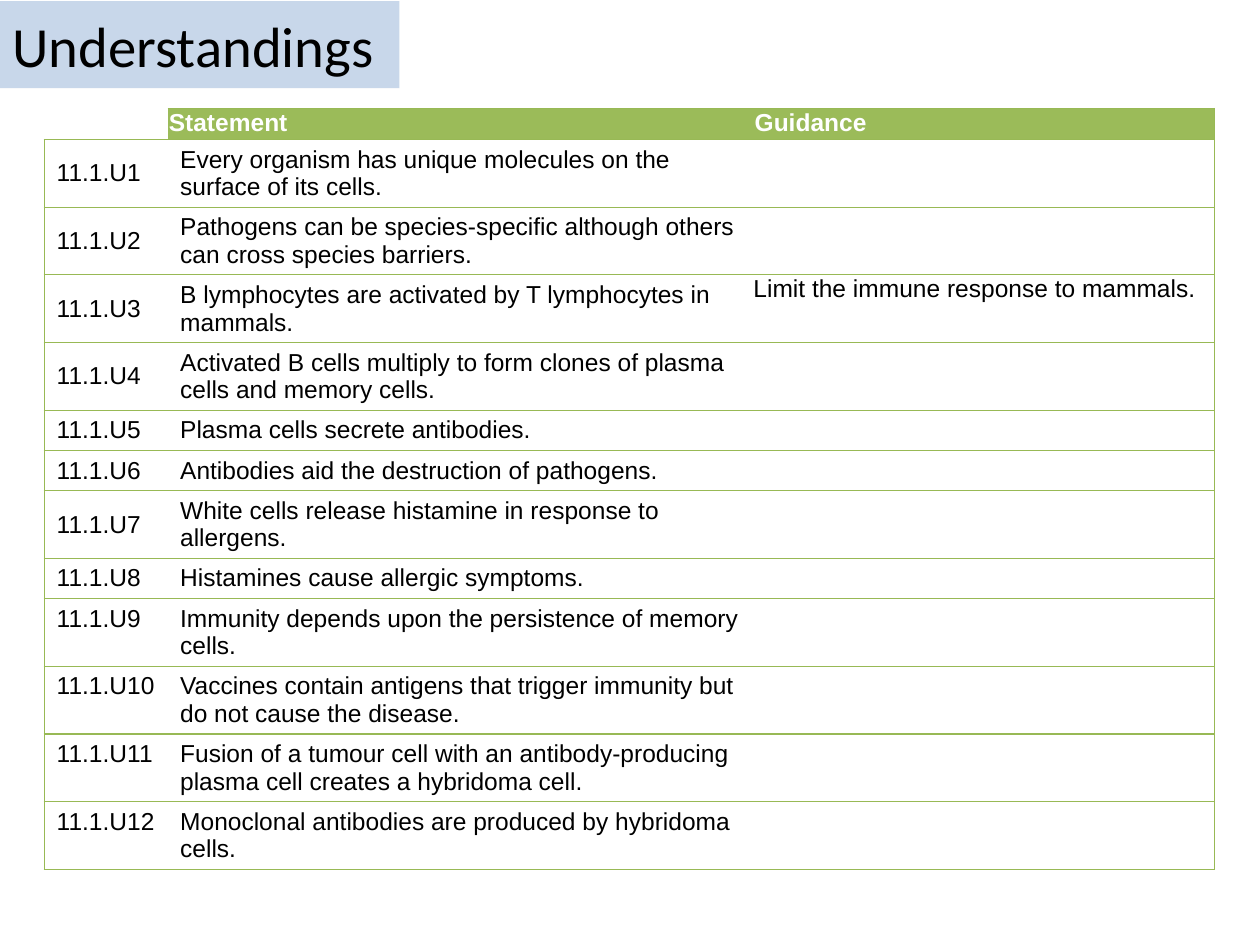
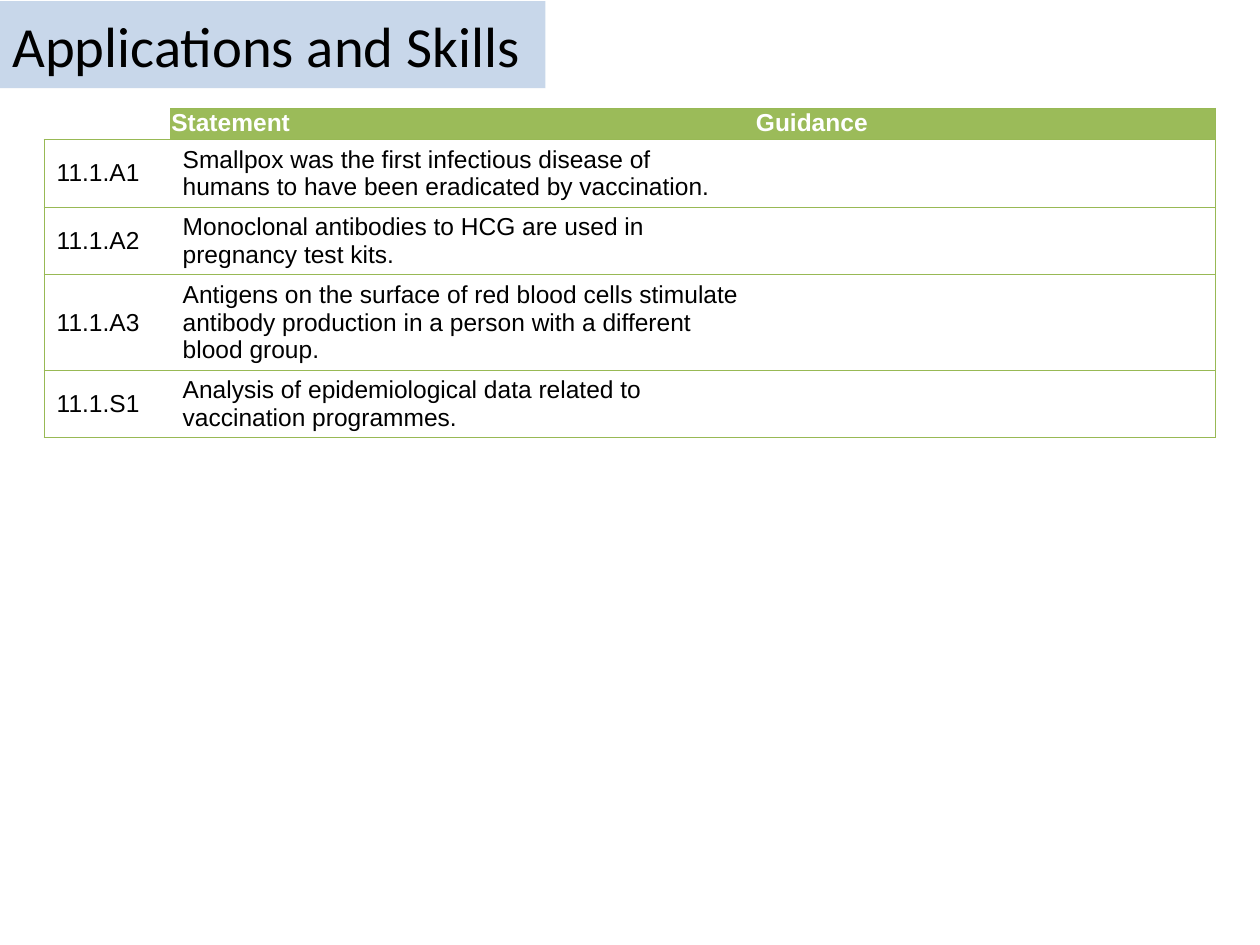
"""Build the immunology syllabus slides: understandings, applications and skills."""
from dataclasses import dataclass

from lxml import etree
from pptx import Presentation
from pptx import util as u
from pptx.dml.color import RGBColor
from pptx.enum import shapes, text
from pptx.oxml import ns


@dataclass(frozen=True)
class Theme:
    title_band: str = "B9CDE5"
    title_opacity: int = 78000
    header: str = "9BBB59"
    border: str = "98B955"
    ink: str = "000000"
    paper: str = "FFFFFF"
    title_font: str = "Calibri"
    table_font: str = "Arial"
    title_size: float = 32.4
    table_size: float = 14
    border_width: float = 0.75
    plain_table_style: str = "{2D5ABB26-0587-4C30-8999-92F81FD0307C}"


@dataclass(frozen=True)
class Statement:
    code: str
    wording: str
    guidance: str = ""
    code_at_top: bool = False


@dataclass(frozen=True)
class Topic:
    title: str
    title_width: float
    column_widths: tuple[float, float, float]
    statements: tuple[Statement, ...]


THEME = Theme()
HEADINGS = ("", "Statement", "Guidance")
HEADER_INSETS = (0.01, 0.01, 0.01, 0)
BODY_INSETS = (0.1, 0.05, 0.1, 0.05)
NO_INSETS = (0, 0, 0, 0)
MIDDLE = text.MSO_ANCHOR.MIDDLE
TOP = text.MSO_ANCHOR.TOP

TOPICS = (
    Topic("Understandings", 3.17, (0.98, 4.65, 3.66), (
        Statement("11.1.U1", "Every organism has unique molecules on the surface of its cells."),
        Statement("11.1.U2", "Pathogens can be species-specific although others can cross species barriers."),
        Statement("11.1.U3", "B lymphocytes are activated by T lymphocytes in mammals.",
                  "Limit the immune response to mammals."),
        Statement("11.1.U4", "Activated B cells multiply to form clones of plasma cells and memory cells."),
        Statement("11.1.U5", "Plasma cells secrete antibodies."),
        Statement("11.1.U6", "Antibodies aid the destruction of pathogens."),
        Statement("11.1.U7", "White cells release histamine in response to allergens."),
        Statement("11.1.U8", "Histamines cause allergic symptoms."),
        Statement("11.1.U9", "Immunity depends upon the persistence of memory cells.", code_at_top=True),
        Statement("11.1.U10", "Vaccines contain antigens that trigger immunity but do not cause the disease.",
                  code_at_top=True),
        Statement("11.1.U11", "Fusion of a tumour cell with an antibody-producing plasma cell creates "
                  "a hybridoma cell.", code_at_top=True),
        Statement("11.1.U12", "Monoclonal antibodies are produced by hybridoma cells.", code_at_top=True),
    )),
    Topic("Applications and Skills", 4.33, (1, 4.64, 3.66), (
        Statement("11.1.A1", "Smallpox was the first infectious disease of humans to have been "
                  "eradicated by vaccination."),
        Statement("11.1.A2", "Monoclonal antibodies to HCG are used in pregnancy test kits."),
        Statement("11.1.A3", "Antigens on the surface of red blood cells stimulate antibody production "
                  "in a person with a different blood group."),
        Statement("11.1.S1", "Analysis of epidemiological data related to vaccination programmes."),
    )),
)


def add_run(paragraph, wording: str, font: str, size: float, colour: str, bold: bool = False) -> None:
    """Append one formatted run to a paragraph."""
    run = paragraph.add_run()
    run.text = wording
    run.font.name = font
    run.font.size = u.Pt(size)
    run.font.bold = bold
    run.font.color.rgb = RGBColor.from_string(colour)


def add_title(slide, topic: Topic) -> None:
    """Draw the translucent title band."""
    band = slide.shapes.add_shape(shapes.MSO_SHAPE.RECTANGLE, u.Inches(0), u.Inches(0.01),
                                  u.Inches(topic.title_width), u.Inches(0.69))
    band.shadow.inherit = False
    band.line.fill.background()
    band.fill.solid()
    band.fill.fore_color.rgb = RGBColor.from_string(THEME.title_band)
    colour = band.fill._xPr.find(".//" + ns.qn("a:srgbClr"))
    etree.SubElement(colour, ns.qn("a:alpha"), val=str(THEME.title_opacity))
    frame = band.text_frame
    frame.word_wrap = True
    frame.vertical_anchor = MIDDLE
    paragraph = frame.paragraphs[0]
    paragraph.alignment = text.PP_ALIGN.LEFT
    add_run(paragraph, topic.title, THEME.title_font, THEME.title_size, THEME.ink)


def set_borders(cell, sides: str) -> None:
    """Line the given sides, named by letter in the order L, R, T, B."""
    properties = cell._tc.get_or_add_tcPr()
    for side in sides:
        line = etree.SubElement(properties, ns.qn(f"a:ln{side}"), w=str(u.Pt(THEME.border_width)))
        fill = etree.SubElement(line, ns.qn("a:solidFill"))
        etree.SubElement(fill, ns.qn("a:srgbClr"), val=THEME.border)


def fill_cell(cell, wording: str, insets: tuple[float, ...], sides: str, fill: str | None,
              colour: str, bold: bool = False, anchor=TOP) -> None:
    """Give a cell its borders, fill, insets and text."""
    set_borders(cell, sides)
    if fill:
        cell.fill.solid()
        cell.fill.fore_color.rgb = RGBColor.from_string(fill)
    else:
        cell.fill.background()
    cell.margin_left, cell.margin_top, cell.margin_right, cell.margin_bottom = map(u.Inches, insets)
    cell.vertical_anchor = anchor
    paragraph = cell.text_frame.paragraphs[0]
    if wording:
        add_run(paragraph, wording, THEME.table_font, THEME.table_size, colour, bold)
    else:
        etree.SubElement(paragraph._p, ns.qn("a:endParaRPr"), sz=str(int(THEME.table_size * 100)))


def add_statement_table(slide, topic: Topic) -> None:
    """Draw the table of codes, statements and guidance."""
    row_heights = [0.24] + [0.25] * len(topic.statements)
    frame = slide.shapes.add_table(len(row_heights), len(HEADINGS), u.Inches(0.35), u.Inches(0.86),
                                   u.Inches(sum(topic.column_widths)), u.Inches(sum(row_heights)))
    table = frame.table
    table.first_row = table.horz_banding = False
    table._tbl.tblPr.find(ns.qn("a:tableStyleId")).text = THEME.plain_table_style
    for column, width in zip(table.columns, topic.column_widths):
        column.width = u.Inches(width)
    for row, height in zip(table.rows, row_heights):
        row.height = u.Inches(height)

    for cell, heading, sides in zip(table.rows[0].cells, HEADINGS, ("B", "TB", "RTB")):
        fill_cell(cell, heading, HEADER_INSETS, sides, THEME.header if heading else None,
                  THEME.paper, bold=True)
    for index, statement in enumerate(topic.statements, start=1):
        code, wording, guidance = table.rows[index].cells
        code_anchor = TOP if statement.code_at_top else MIDDLE
        for cell, content, insets, sides, anchor in (
            (code, statement.code, BODY_INSETS, "LTB", code_anchor),
            (wording, statement.wording, BODY_INSETS, "TB", MIDDLE),
            (guidance, statement.guidance, NO_INSETS, "RTB", TOP),
        ):
            fill_cell(cell, content, insets, sides, THEME.paper, THEME.ink, anchor=anchor)


def main() -> None:
    """Build and save the presentation."""
    presentation = Presentation()
    presentation.slide_width = u.Inches(10)
    presentation.slide_height = u.Inches(7.5)
    for topic in TOPICS:
        slide = presentation.slides.add_slide(presentation.slide_layouts[6])
        add_title(slide, topic)
        add_statement_table(slide, topic)
    presentation.save("out.pptx")


if __name__ == "__main__":
    main()
